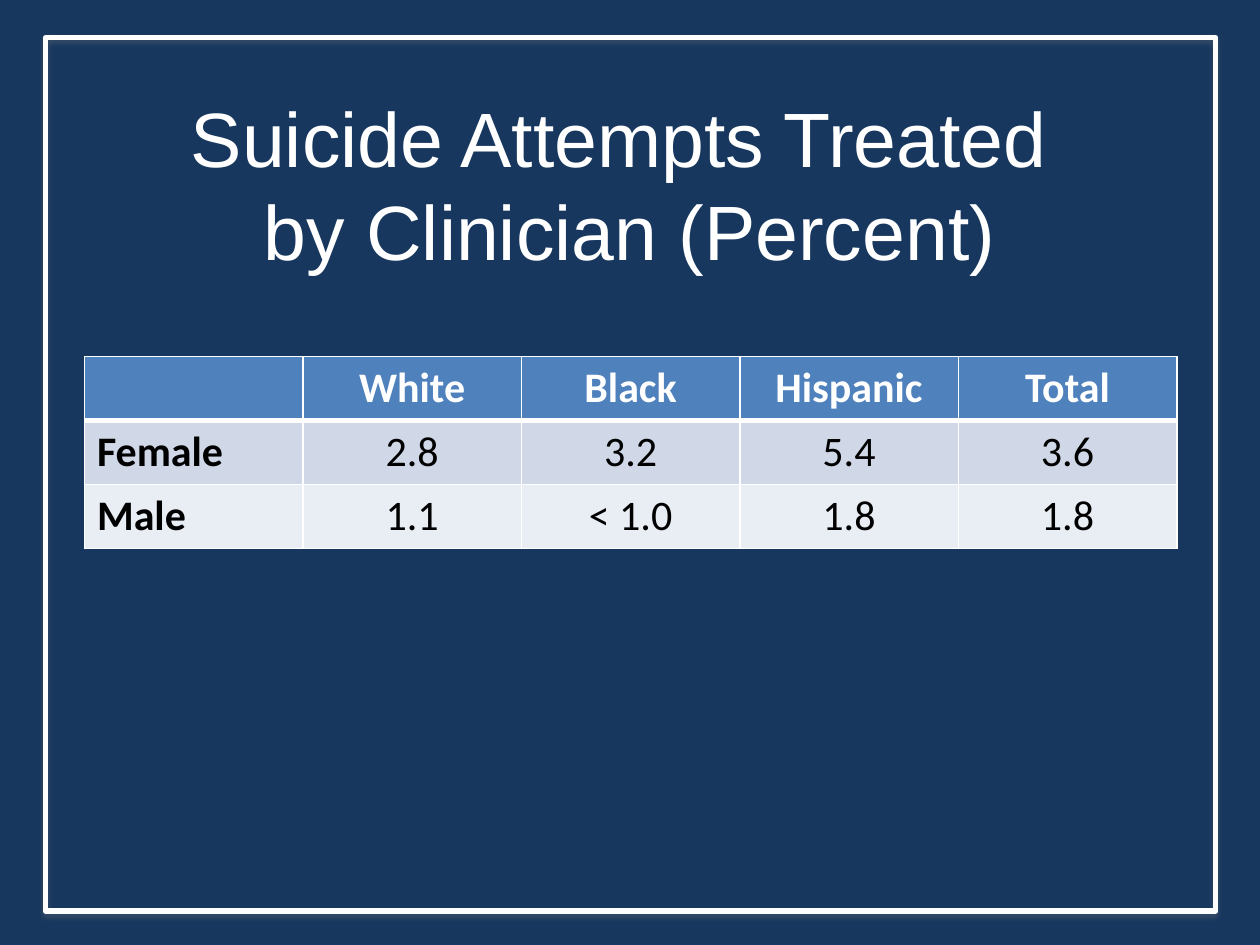
from lxml import etree
from pptx import Presentation
from pptx.dml.color import RGBColor
from pptx.enum.shapes import MSO_SHAPE
from pptx.enum.text import MSO_ANCHOR, PP_ALIGN
from pptx.oxml import parse_xml
from pptx.oxml.ns import qn
from pptx.util import Inches, Pt

NAVY = RGBColor(0x17, 0x37, 0x5E)
BLUE = RGBColor(0x4F, 0x81, 0xBD)
PALE_BLUE = RGBColor(0xD0, 0xD8, 0xE8)
PALER_BLUE = RGBColor(0xE9, 0xED, 0xF4)
WHITE = RGBColor(0xFF, 0xFF, 0xFF)
BLACK = RGBColor(0, 0, 0)

FRAME_SHADOW = """
<a:effectLst xmlns:a="http://schemas.openxmlformats.org/drawingml/2006/main">
  <a:outerShdw blurRad="39370" dist="22860" dir="5400000" rotWithShape="0">
    <a:srgbClr val="808080"><a:alpha val="35000"/></a:srgbClr>
  </a:outerShdw>
</a:effectLst>"""

ROWS = [
    ["", "White", "Black", "Hispanic", "Total"],
    ["Female", "2.8", "3.2", "5.4", "3.6"],
    ["Male", "1.1", "< 1.0", "1.8", "1.8"],
]
ROW_FILLS = [BLUE, PALE_BLUE, PALER_BLUE]


def add_borders(cell, top, bottom):
    """Draw white cell borders: 1 pt at the sides, the given points above and below."""
    properties = cell._tc.get_or_add_tcPr()
    sides = [("a:lnL", 1), ("a:lnR", 1), ("a:lnT", top), ("a:lnB", bottom)]
    for position, (tag, width) in enumerate(sides):
        border = etree.Element(qn(tag), w=str(Pt(width)))
        fill = etree.SubElement(border, qn("a:solidFill"))
        etree.SubElement(fill, qn("a:srgbClr"), val=str(WHITE))
        properties.insert(position, border)


prs = Presentation()
prs.slide_width, prs.slide_height = Inches(10), Inches(7.5)
slide = prs.slides.add_slide(prs.slide_layouts[5])
slide.background.fill.solid()
slide.background.fill.fore_color.rgb = NAVY

# Frame, placed behind the title
frame = slide.shapes.add_shape(
    MSO_SHAPE.RECTANGLE, Inches(0.36), Inches(0.3), Inches(9.29), Inches(6.93))
frame.fill.background()
frame.line.color.rgb = WHITE
frame.line.width = Pt(3)
frame._element.spPr.append(parse_xml(FRAME_SHADOW))
slide.shapes._spTree.insert(2, frame._element)

# Title
title = slide.shapes.title
title.left, title.top = Inches(0.5), Inches(0.83)
title.width, title.height = Inches(9), Inches(1.25)
title.text_frame.text = "Suicide Attempts Treated \vby Clinician (Percent)"
title.text_frame.vertical_anchor = MSO_ANCHOR.MIDDLE
heading = title.text_frame.paragraphs[0]
heading.alignment = PP_ALIGN.CENTER
heading.font.name = "Arial"
heading.font.size = Pt(44)
heading.font.color.rgb = WHITE

# Table of percentages
table = slide.shapes.add_table(
    len(ROWS), len(ROWS[0]),
    Inches(0.67), Inches(2.83), Inches(8.67), Inches(1.5)).table
for r, values in enumerate(ROWS):
    for c, value in enumerate(values):
        cell = table.cell(r, c)
        cell.fill.solid()
        cell.fill.fore_color.rgb = ROW_FILLS[r]
        add_borders(cell, top=3 if r == 1 else 1, bottom=3 if r == 0 else 1)
        cell.text = value
        entry = cell.text_frame.paragraphs[0]
        entry.alignment = PP_ALIGN.CENTER if c else PP_ALIGN.LEFT
        entry.font.name = "Calibri"
        entry.font.size = Pt(24)
        entry.font.bold = r == 0 or c == 0
        entry.font.color.rgb = BLACK if r else WHITE

prs.save("out.pptx")
